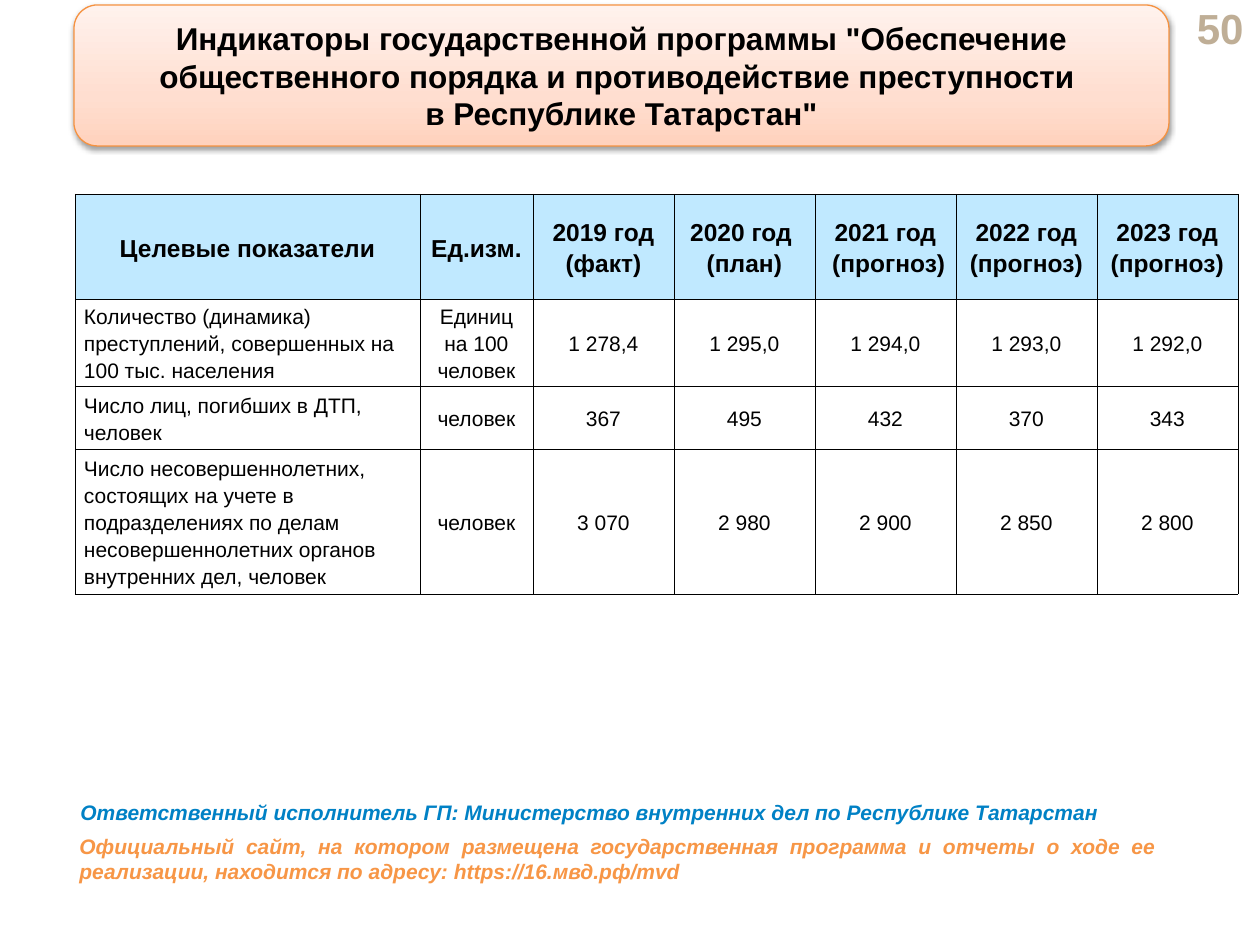
from lxml import etree
from pptx import Presentation
from pptx.dml.color import RGBColor
from pptx.enum.shapes import MSO_SHAPE
from pptx.enum.text import MSO_ANCHOR, PP_ALIGN
from pptx.oxml import parse_xml
from pptx.oxml.ns import nsdecls, qn
from pptx.util import Pt

LEFT, CENTER = PP_ALIGN.LEFT, PP_ALIGN.CENTER
RIGHT, JUSTIFY = PP_ALIGN.RIGHT, PP_ALIGN.JUSTIFY
TOP, MIDDLE = MSO_ANCHOR.TOP, MSO_ANCHOR.MIDDLE
ROUND_RECT = MSO_SHAPE.ROUNDED_RECTANGLE
PX = 914400 / 126

THEME = {
    "font": "Arial",
    "text": "000000",
    "number": "BFAE96",
    "owner": "0081C5",
    "site": "F79646",
    "header_fill": "C0E9FF",
    "banner_line": "F69240",
    "banner_stops": [(0, "FFD2BD"), (35, "FFDED0"), (100, "FFF2ED")],
    "number_size": 24,
    "title_size": 18,
    "header_size": 14,
    "body_size": 12,
}


def px(*values):
    return [round(v * PX) for v in values]


def write(tf, text, size=THEME["body_size"], color=THEME["text"], bold=False,
          italic=False, align=LEFT, anchor=TOP, spacing=None):
    """Fill a text frame: newline starts a paragraph, \\v breaks a line."""
    tf.word_wrap = True
    tf.vertical_anchor = anchor
    tf.text = text
    for p in tf.paragraphs:
        p.alignment = align
        p.line_spacing = spacing
        for r in p.runs:
            r.font.name = THEME["font"]
            r.font.size = Pt(size)
            r.font.bold = bold
            r.font.italic = italic
            r.font.color.rgb = RGBColor.from_string(color)


prs = Presentation()
prs.slide_width, prs.slide_height = px(1260, 945)
s = prs.slides.add_slide(prs.slide_layouts[6])

# Slide number
tb = s.shapes.add_textbox(*px(1148, 6, 108, 43))
write(tb.text_frame, "50", size=THEME["number_size"], color=THEME["number"],
      bold=True, align=RIGHT, anchor=MIDDLE)

# Title banner
sp = s.shapes.add_shape(ROUND_RECT, *px(74, 5, 1095, 141))
sp.line.color.rgb = RGBColor.from_string(THEME["banner_line"])
sp.line.width = Pt(0.75)
write(sp.text_frame,
      'Индикаторы государственной программы "Обеспечение общественного порядка '
      'и противодействие преступности \nв Республике Татарстан"',
      size=THEME["title_size"], bold=True, align=CENTER, anchor=MIDDLE)

# Banner gradient and soft shadow
stops = "".join(f'<a:gs pos="{pos * 1000}"><a:srgbClr val="{color}"/></a:gs>'
                for pos, color in THEME["banner_stops"])
gradient = parse_xml(f'<a:gradFill {nsdecls("a")} rotWithShape="1"><a:gsLst>{stops}</a:gsLst>'
                     '<a:lin ang="16200000" scaled="1"/></a:gradFill>')
sp_pr = sp.element.spPr
sp_pr.find(qn("a:prstGeom")).addnext(gradient)
sp.shadow.inherit = False
sp_pr.find(qn("a:effectLst")).append(parse_xml(
    f'<a:outerShdw {nsdecls("a")} blurRad="40000" dist="20000" dir="5400000" rotWithShape="0">'
    '<a:srgbClr val="000000"><a:alpha val="38000"/></a:srgbClr></a:outerShdw>'))

# Indicator table
rows = [
    ["Целевые показатели", "Ед.изм.", "2019 год\v(факт)", "2020 год \v(план)",
     "2021 год\v (прогноз)", "2022 год\v(прогноз)", "2023 год\v(прогноз)"],
    ["Количество (динамика) преступлений, совершенных на 100 тыс. населения",
     "Единиц на 100 человек", "1 278,4", "1 295,0", "1 294,0", "1 293,0", "1 292,0"],
    ["Число лиц, погибших в ДТП, человек",
     "человек", "367", "495", "432", "370", "343"],
    ["Число несовершеннолетних, состоящих на учете в подразделениях по делам "
     "несовершеннолетних органов внутренних дел, человек",
     "человек", "3 070", "2 980", "2 900", "2 850", "2 800"],
]
col_widths = [345, 113] + [141] * 5
row_heights = [105, 68, 63, 126]
table = s.shapes.add_table(len(rows), len(col_widths),
                           *px(75, 194, sum(col_widths), sum(row_heights))).table
table.first_row = table.horz_banding = False
for col, width in zip(table.columns, px(*col_widths)):
    col.width = width
for row, height in zip(table.rows, px(*row_heights)):
    row.height = height

for i, values in enumerate(rows):
    header = i == 0
    for j, text in enumerate(values):
        cell = table.cell(i, j)
        cell.margin_left, cell.margin_right = px(9, 9)
        cell.margin_top = cell.margin_bottom = 0
        write(cell.text_frame, text, bold=header, spacing=1.15,
              size=THEME["header_size" if header else "body_size"],
              align=CENTER if header or j else LEFT)
        cell.vertical_anchor = MIDDLE
        tc_pr = cell._tc.get_or_add_tcPr()
        for side in ("lnL", "lnR", "lnT", "lnB"):
            ln = etree.SubElement(tc_pr, qn(f"a:{side}"), w="3175")
            fill = etree.SubElement(ln, qn("a:solidFill"))
            etree.SubElement(fill, qn("a:srgbClr"), val=THEME["text"])
        if header:
            cell.fill.solid()
            cell.fill.fore_color.rgb = RGBColor.from_string(THEME["header_fill"])
        else:
            cell.fill.background()

# Responsible body and website
notes = [
    ((68, 793, 1176, 38), THEME["owner"],
     "Ответственный исполнитель ГП: Министерство внутренних дел по Республике Татарстан"),
    ((67, 827, 1102, 63), THEME["site"],
     "Официальный сайт, на котором размещена государственная программа и отчеты "
     "о ходе ее реализации, находится по адресу: https://16.мвд.рф/mvd"),
]
for box, color, text in notes:
    tb = s.shapes.add_textbox(*px(*box))
    write(tb.text_frame, text, color=color, bold=True, italic=True, align=JUSTIFY)

prs.save("out.pptx")
